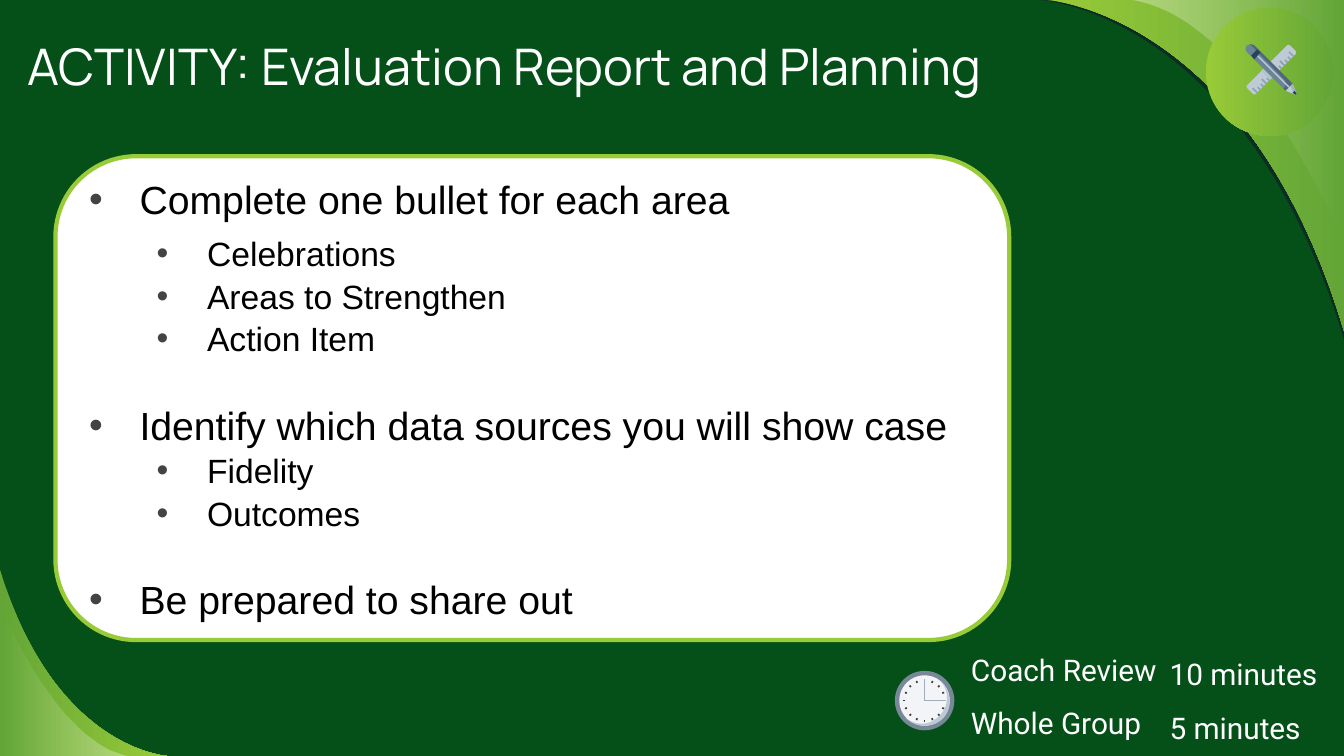
from math import cos, pi, sin
from lxml import etree
from pptx import Presentation
from pptx.dml.color import RGBColor
from pptx.enum.shapes import MSO_CONNECTOR, MSO_SHAPE
from pptx.enum.text import MSO_ANCHOR, MSO_AUTO_SIZE
from pptx.oxml.ns import qn
from pptx.util import Inches, Pt

LINE = MSO_CONNECTOR.STRAIGHT
OVAL, ROUND = MSO_SHAPE.OVAL, MSO_SHAPE.ROUNDED_RECTANGLE
TOP, MIDDLE = MSO_ANCHOR.TOP, MSO_ANCHOR.MIDDLE
FIXED = MSO_AUTO_SIZE.NONE

HUE = {
    "back": "045018", "leaf": "63A537", "lime": "99CB38", "white": "FFFFFF",
    "black": "000000", "shade": "12102F", "bullet": "434343",
    "ruler": "BECBD5", "tick": "88A1B4", "under": "B2C2CE",
    "pencil": "6B8397", "edge": "4E677C", "lead": "29435D", "wood": "9FB3C2",
    "rim": "798898", "face": "F2F4F7", "hand": "A3ADB8", "arc": "BCCAD6",
    "mark": "3D3D3D",
}
RGB = {name: RGBColor.from_string(code) for name, code in HUE.items()}

# Slide: a grid of 13.33 columns and 7.5 rows of square cells
COLS, ROWS = 13.33, 7.5
CELL = Inches(1)
deck = Presentation()
deck.slide_width, deck.slide_height = int(COLS * CELL), int(ROWS * CELL)
slide = deck.slides.add_slide(deck.slide_layouts[1])
slide.background.fill.solid()
slide.background.fill.fore_color.rgb = RGB["back"]
shapes = slide.shapes


def paint(shape, *tones):
    """Fill with one tone, or a left-to-right blend of two (name, opacity %)."""
    shape.shadow.inherit = False
    fill = shape.fill
    if len(tones) == 1:
        fill.solid()
        fill.fore_color.rgb = RGB[tones[0][0]]
    else:
        fill.gradient()
        fill.gradient_angle = 0
        for stop, tone in zip(fill.gradient_stops, tones):
            stop.color.rgb = RGB[tone[0]]
    colors = list(shape.element.spPr.iter(qn("a:srgbClr")))
    for color, tone in zip(colors, tones):
        if tone[1] < 100:
            etree.SubElement(color, qn("a:alpha"), val=str(tone[1] * 1000))
    shape.line.fill.background()


def outline(start, *parts):
    """Closed outline; a pair is a corner, six numbers are a Bezier curve."""
    dots = [start]
    for part in parts:
        if len(part) == 2:
            dots.append(part)
            continue
        nodes = [dots[-1], part[:2], part[2:4], part[4:]]
        for step in range(1, 41):
            t = step / 40
            mix = ((1 - t) ** 3, 3 * t * (1 - t) ** 2, 3 * t * t * (1 - t), t ** 3)
            dots.append(tuple(sum(m * n[axis] for m, n in zip(mix, nodes))
                              for axis in (0, 1)))
    dots = [(int(x * CELL), int(y * CELL)) for x, y in dots]
    pen = shapes.build_freeform(*dots[0])
    pen.add_line_segments(dots[1:], close=True)
    return pen.convert_to_shape()


# Corner swooshes
LEAF, LIME = ("leaf", 100), ("lime", 100)
CLEAR, MIST = ("white", 0), ("white", 36)
east = (COLS, 0)
west = (0, ROWS)
paint(outline((COLS, 3.37), (12.35, .11, 10.31, 0, 10.31, 0), east), ("shade", 54))
paint(outline((10.38, 0), (10.38, 0, 12.38, .11, COLS, 3.28), east), LIME, LEAF)
paint(outline((COLS, 2.44), (COLS, 2.44, 12.42, .15, 11.18, 0), east), MIST, CLEAR)
paint(outline((1.66, ROWS), (1.66, ROWS, .54, 7.44, 0, 5.65), west), LEAF, LIME)
paint(outline((0, 6.01), (0, 6.01, .56, 7.41, 1.32, ROWS), west), CLEAR, MIST)

# Title
title = shapes.title
title.left, title.top, title.width, title.height = (
    int(n * CELL) for n in (.17, .25, 11.46, .92))
frame = title.text_frame
frame.text = "ACTIVITY: Evaluation Report and Planning"
frame.auto_size, frame.vertical_anchor, frame.word_wrap = FIXED, TOP, True
frame.margin_left = frame.margin_right = int(.1 * CELL)
frame.margin_top = frame.margin_bottom = int(.1 * CELL)
head = frame.paragraphs[0]
head.alignment = 1
font = head.font
font.name, font.size, font.color.rgb = "Manrope", Pt(36), RGB["white"]

# Task list in a rounded panel
body = slide.placeholders[1]
body.left, body.top, body.width, body.height = (
    int(n * CELL) for n in (.55, 1.55, 9.46, 4.8))
form = etree.SubElement(body.element.spPr, qn("a:prstGeom"), prst="roundRect")
etree.SubElement(form, qn("a:avLst"))
body.fill.solid()
body.fill.fore_color.rgb = RGB["white"]
body.line.color.rgb, body.line.width = RGB["lime"], Pt(3)
frame = body.text_frame
frame.auto_size, frame.vertical_anchor, frame.word_wrap = FIXED, MIDDLE, True
tasks = [  # level, space before, space after, text
    (0, 0, 6, "Complete one bullet for each area"),
    (1, 0, 0, "Celebrations"),
    (1, 0, 0, "Areas to Strengthen"),
    (1, 0, 0, "Action Item"),
    (0, 29, 0, "Identify which data sources you will show case"),
    (1, 0, 0, "Fidelity"),
    (1, 0, 0, "Outcomes"),
    (0, 29, 0, "Be prepared to share out"),
]
for row, (level, before, after, text) in enumerate(tasks):
    para = frame.paragraphs[0] if row == 0 else frame.add_paragraph()
    para.text, para.level, para.line_spacing = text, level, 1.05
    para.space_before, para.space_after = Pt(before), Pt(after)
    font = para.font
    font.name, font.size, font.color.rgb = "Arial", Pt(28 - 4 * level), RGB["black"]
    props = para._p.get_or_add_pPr()
    props.set("marL", str(int((.5 + .67 * level) * CELL)))
    props.set("indent", str(int(-.5 * CELL)))
    tint = etree.Element(qn("a:buClr"))
    etree.SubElement(tint, qn("a:srgbClr"), val=HUE["bullet"])
    face = etree.Element(qn("a:buFont"), typeface="Arial")
    sign = etree.Element(qn("a:buChar"), char="•")
    spot = props.index(props.find(qn("a:defRPr")))
    props[spot:spot] = [tint, face, sign]

# Badge with ruler
paint(shapes.add_shape(OVAL, *(int(n * CELL) for n in (11.96, .08, 1.27, 1.27))),
      LIME, LEAF)
ruler = shapes.add_shape(ROUND, *(int(n * CELL) for n in (12.31, .63, .6, .12)))
ruler.rotation = -45
paint(ruler, ("ruler", 100))

# Strokes: colour, width, from, to
strokes = []
for i in range(13):
    x, y = 12.47 + .03 * i, .92 - .03 * i
    size = .025 if i % 3 else .045
    strokes.append(("tick", 1.1, x, y, x - size, y - size))

# Clock dial
MIDX, MIDY = 9.17, 6.95
for tone, radius in (("rim", .295), ("face", .25)):
    dial = shapes.add_shape(OVAL, *(int(n * CELL) for n in (
        MIDX - radius, MIDY - radius, 2 * radius, 2 * radius)))
    paint(dial, (tone, 100))
paint(outline((9.33, 6.76), (9.42, 6.86, 9.41, 7.01, 9.32, 7.1),
              (9.27, 7.15, 9.21, 7.18, 9.14, 7.18), (9.09, 7.18, 9.03, 7.16, 8.98, 7.12),
              (9.03, 7.17, 9.1, 7.2, 9.17, 7.2), (9.23, 7.2, 9.3, 7.18, 9.35, 7.13),
              (9.45, 7.03, 9.44, 6.86, 9.33, 6.76)), ("arc", 100))

# Clock marks in sixteenths, none behind the hands
for i in range(1, 16):
    if i != 12:
        dx, dy = sin(i * pi / 8 + pi), cos(i * pi / 8 + pi)
        strokes.append(("mark", 1.2, MIDX + .19 * dx, MIDY + .19 * dy,
                        MIDX + .21 * dx, MIDY + .21 * dy))
strokes += [("hand", 1.3, MIDX, MIDY, MIDX, MIDY - .21),
            ("hand", 1.3, MIDX, MIDY, MIDX + .21, MIDY)]
for tone, width, *ends in strokes:
    line = shapes.add_connector(LINE, *(int(n * CELL) for n in ends))
    line.line.color.rgb, line.line.width = RGB[tone], Pt(width)
    etree.SubElement(line.element.spPr, qn("a:effectLst"))

# Pencil across the ruler
pencil = [
    ("under", (12.58, .63), (12.51, .7), (12.6, .79), (12.67, .72)),
    ("pencil", (12.41, .44), (12.39, .44, 12.38, .45, 12.37, .45),
     (12.35, .47, 12.35, .5, 12.37, .52), (12.75, .9), (12.82, .83), (12.44, .45)),
    ("ruler", (12.82, .83), (12.75, .9), (12.85, .94), (12.86, .93)),
    ("wood", (12.82, .83), (12.8, .85), (12.83, .93), (12.85, .94), (12.86, .93)),
    ("edge", (12.41, .44), (12.39, .44), (12.41, .45), (12.73, .78),
     (12.76, .81, 12.76, .85, 12.73, .88), (12.75, .9), (12.82, .83), (12.44, .45)),
    ("lead", (12.84, .9), (12.82, .92), (12.85, .94), (12.86, .93)),
    ("lead", (12.47, .49), (12.41, .55), (12.44, .59), (12.5, .52)),
    ("ruler", (12.48, .55), (12.47, .56), (12.78, .87), (12.79, .86)),
]
for tone, *dots in pencil:
    paint(outline(*dots), (tone, 100))

# Timing notes: place, line spacing, gap, lines
notes = [
    ((11.25, 6.38, 2.08, .96), 1.5, 0, ("10 minutes", "5 minutes")),
    ((9.28, 6.58, 2.65, .65), 1, 12, ("Coach Review", "Whole Group")),
]
for place, pitch, gap, lines in notes:
    frame = shapes.add_textbox(*(int(n * CELL) for n in place)).text_frame
    frame.word_wrap, frame.vertical_anchor = True, MIDDLE
    frame.margin_left = frame.margin_right = int(.13 * CELL)
    frame.margin_top = frame.margin_bottom = int(.13 * CELL)
    frame.text = "\n".join(lines)
    for row, para in enumerate(frame.paragraphs):
        para.line_spacing, para.space_before = pitch, Pt(gap * row)
        para._p.get_or_add_pPr().set("marL", str(int(.22 * CELL)))
        font = para.font
        font.name, font.size, font.color.rgb = "Roboto", Pt(21.3), RGB["white"]

deck.save("out.pptx")
